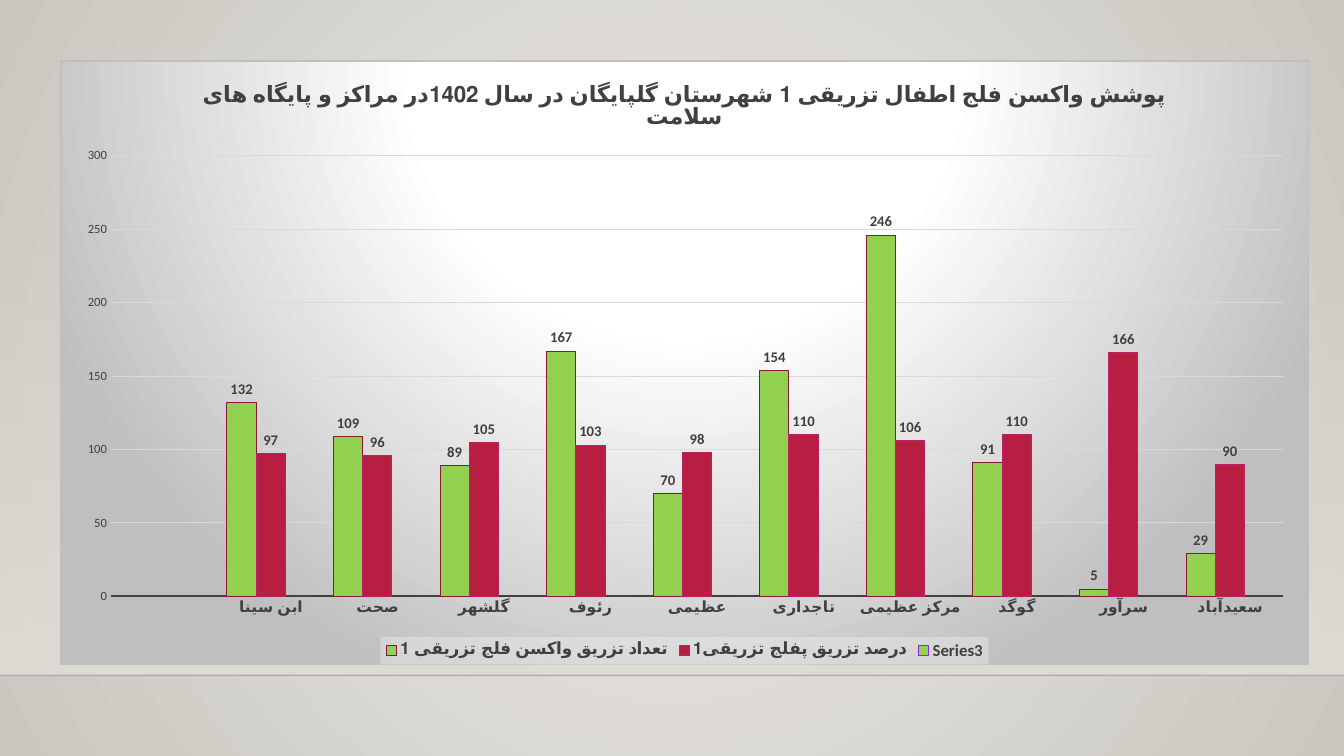
from pptx import Presentation
from pptx.chart.data import CategoryChartData
from pptx.dml.color import RGBColor
from pptx.enum.chart import XL_CHART_TYPE, XL_LABEL_POSITION, XL_LEGEND_POSITION, XL_TICK_MARK
from pptx.enum.shapes import MSO_CONNECTOR, MSO_SHAPE
from pptx.oxml import parse_xml
from pptx.oxml.ns import nsdecls
from pptx.util import Inches, Pt

COLUMN = XL_CHART_TYPE.COLUMN_CLUSTERED
BOTTOM = XL_LEGEND_POSITION.BOTTOM
OUTSIDE = XL_LABEL_POSITION.OUTSIDE_END
NO_TICK = XL_TICK_MARK.NONE


class Theme:
    face = "Calibri"
    text, grid, edge = "404040", "D9D9D9", "BFBFBF"
    floor, rule, pale = "DFDBD5", "000001", "F2F2F2"
    back = [(0, "ECEAE7", 100), (100, "CAC7C1", 100)]
    fade = [(0, floor, 0), (100, floor, 100)]
    glow = [(0, "FFFFFF", 100), (39, "FFFFFF", 100), (100, edge, 100)]
    title, legend, cat, label, val = 16, 12, 11, 10.5, 9


def style(font, size, bold=True):
    font.name, font.size, font.bold = Theme.face, Pt(size), bold
    font.color.rgb = RGBColor.from_string(Theme.text)


def grad(stops, way):
    """Return a gradient fill of (percent, colour, opacity) stops."""
    marks = "".join(
        f'<a:gs pos="{pos * 1000}"><a:srgbClr val="{color}">'
        f'<a:alpha val="{alpha * 1000}"/></a:srgbClr></a:gs>'
        for pos, color, alpha in stops)
    return f'<a:gradFill {nsdecls("a")} rotWithShape="1"><a:gsLst>{marks}</a:gsLst>{way}</a:gradFill>'


centers = ["ابن سینا", "صحت", "گلشهر", "رئوف", "عظیمی", "تاجداری",
           "مرکز عظیمی", "گوگد", "سرآور", "سعیدآباد"]
series = [
    ("تعداد تزریق واکسن فلج تزریقی 1", [132, 109, 89, 167, 70, 154, 246, 91, 5, 29], "92D050", "891731"),
    ("درصد تزریق پفلج تزریقی1", [97, 96, 105, 103, 98, 110, 106, 110, 166, 90], "B71E42", "BA2169"),
    ("Series3", [None] * 10, "92D050", "9622E7"),
]

deck = Presentation()
deck.slide_width, deck.slide_height = Inches(13.33), Inches(7.5)
slide = deck.slides.add_slide(deck.slide_layouts[6])

# Backdrop
circle = '<a:path path="circle"><a:fillToRect l="50000" t="{}" r="50000" b="{}"/></a:path>'
fill = slide.background.fill
fill.gradient()
old = slide.element.xpath("./p:cSld/p:bg/p:bgPr/a:gradFill")[0]
old.getparent().replace(old, parse_xml(grad(Theme.back, circle.format(50000, 50000))))

wall = slide.shapes.add_shape(MSO_SHAPE.RECTANGLE, 0, Inches(2.21), Inches(13.33), Inches(4.49))
wall.shadow.inherit = False
wall.line.fill.background()
wall.fill.gradient()
old = wall.element.spPr.find("{*}gradFill")
old.getparent().replace(old, parse_xml(grad(Theme.fade, '<a:lin ang="5400000" scaled="0"/>')))

rule = slide.shapes.add_connector(MSO_CONNECTOR.STRAIGHT, 0, Inches(6.7), Inches(13.33), Inches(6.7))
rule.line.width = Pt(1)
rule.line.color.rgb = RGBColor.from_string(Theme.rule)
tint = rule.element.xpath(".//a:ln//a:srgbClr")[0]
tint.append(parse_xml(f'<a:alpha {nsdecls("a")} val="20000"/>'))
rule.element.spPr.append(parse_xml(f'<a:effectLst {nsdecls("a")}/>'))

# Chart
data = CategoryChartData()
data.categories = [""] + centers
for name, vals, color, edge in series:
    data.add_series(name, [None] + vals)
chart = slide.shapes.add_chart(
    COLUMN, Inches(0.6), Inches(0.6), Inches(12.38), Inches(6), data).chart
chart.font.name, chart.font.size = Theme.face, Pt(10)

chart.has_title = True
para = chart.chart_title.text_frame.paragraphs[0]
run = para.add_run()
run.text = "پوشش واکسن فلج اطفال تزریقی 1 شهرستان گلپایگان در سال 1402در مراکز و پایگاه های سلامت"
style(run.font, Theme.title)
chart.chart_title.include_in_layout = False

chart.has_legend = True
chart.legend.position = BOTTOM
chart.legend.include_in_layout = False
style(chart.legend.font, Theme.legend)

plot = chart.plots[0]
plot.gap_width, plot.overlap, plot.vary_by_categories = 65, 0, False
for bars, (name, vals, color, edge) in zip(plot.series, series):
    bars.format.fill.solid()
    bars.format.fill.fore_color.rgb = RGBColor.from_string(color)
    bars.format.line.color.rgb = RGBColor.from_string(edge)
    bars.format.line.width = Pt(0.75)
    labels = bars.data_labels
    labels.show_value, labels.position = True, OUTSIDE
    style(labels.font, Theme.label)

cats, scale = chart.category_axis, chart.value_axis
for axis in (cats, scale):
    axis.major_tick_mark = axis.minor_tick_mark = NO_TICK
style(cats.tick_labels.font, Theme.cat)
cats.format.line.color.rgb = RGBColor.from_string(Theme.text)
cats.format.line.width = Pt(1.5)
style(scale.tick_labels.font, Theme.val, bold=False)
scale.format.line.fill.background()
scale.minimum_scale, scale.maximum_scale, scale.major_unit = 0, 300, 50
scale.has_major_gridlines = True
scale.major_gridlines.format.line.color.rgb = RGBColor.from_string(Theme.grid)
scale.major_gridlines.format.line.width = Pt(0.75)

# Chart and legend backing, plot position
space = chart.element
space.find("{*}txPr").addprevious(parse_xml(
    f'<c:spPr {nsdecls("c", "a")}>{grad(Theme.glow, circle.format(-80000, 180000))}'
    f'<a:ln w="9525"><a:solidFill><a:srgbClr val="{Theme.edge}"/></a:solidFill></a:ln></c:spPr>'))
space.xpath(".//c:legend/c:txPr")[0].addprevious(parse_xml(
    f'<c:spPr {nsdecls("c", "a")}><a:solidFill><a:srgbClr val="{Theme.pale}">'
    '<a:alpha val="39000"/></a:srgbClr></a:solidFill></c:spPr>'))
area = space.xpath(".//c:plotArea")[0]
for old in area.xpath("./c:layout"):
    area.remove(old)
spots = "".join(f'<c:{key} val="{val}"/>' for key, val in [
    ("layoutTarget", "inner"), ("xMode", "edge"), ("yMode", "edge"),
    ("x", 0.04), ("y", 0.157), ("w", 0.94), ("h", 0.73)])
area.insert(0, parse_xml(
    f'<c:layout {nsdecls("c")}><c:manualLayout>{spots}</c:manualLayout></c:layout>'))

deck.save("out.pptx")
